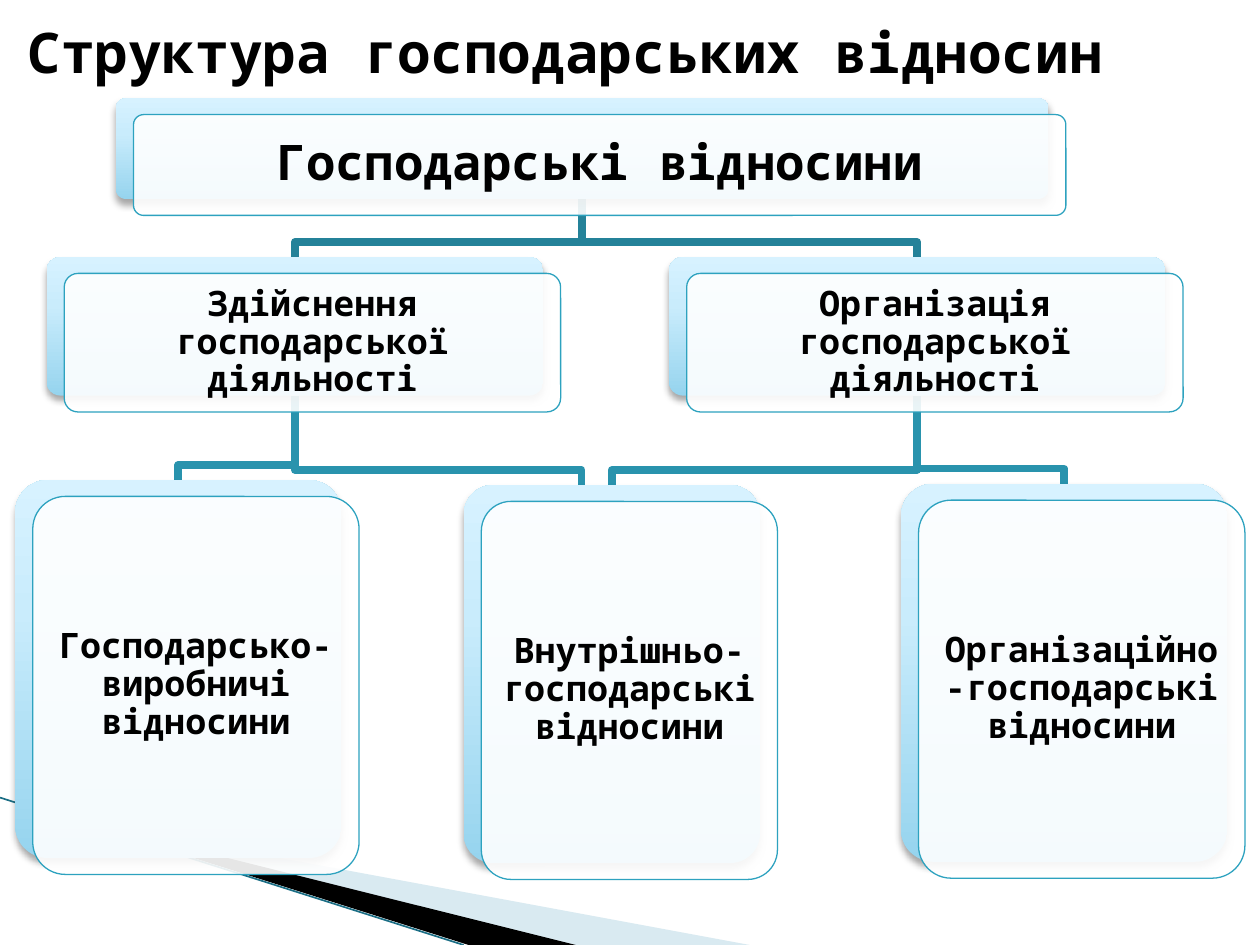
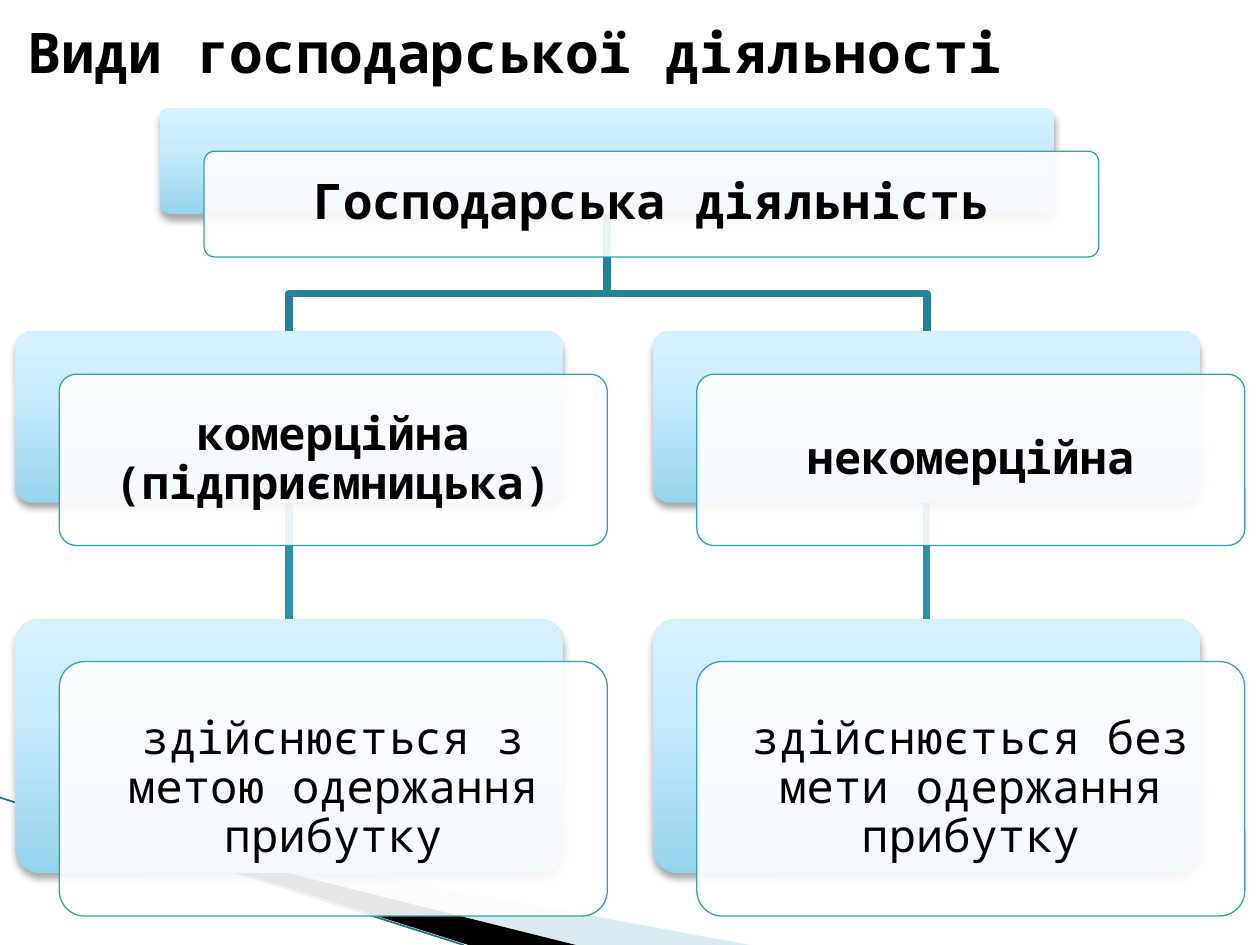
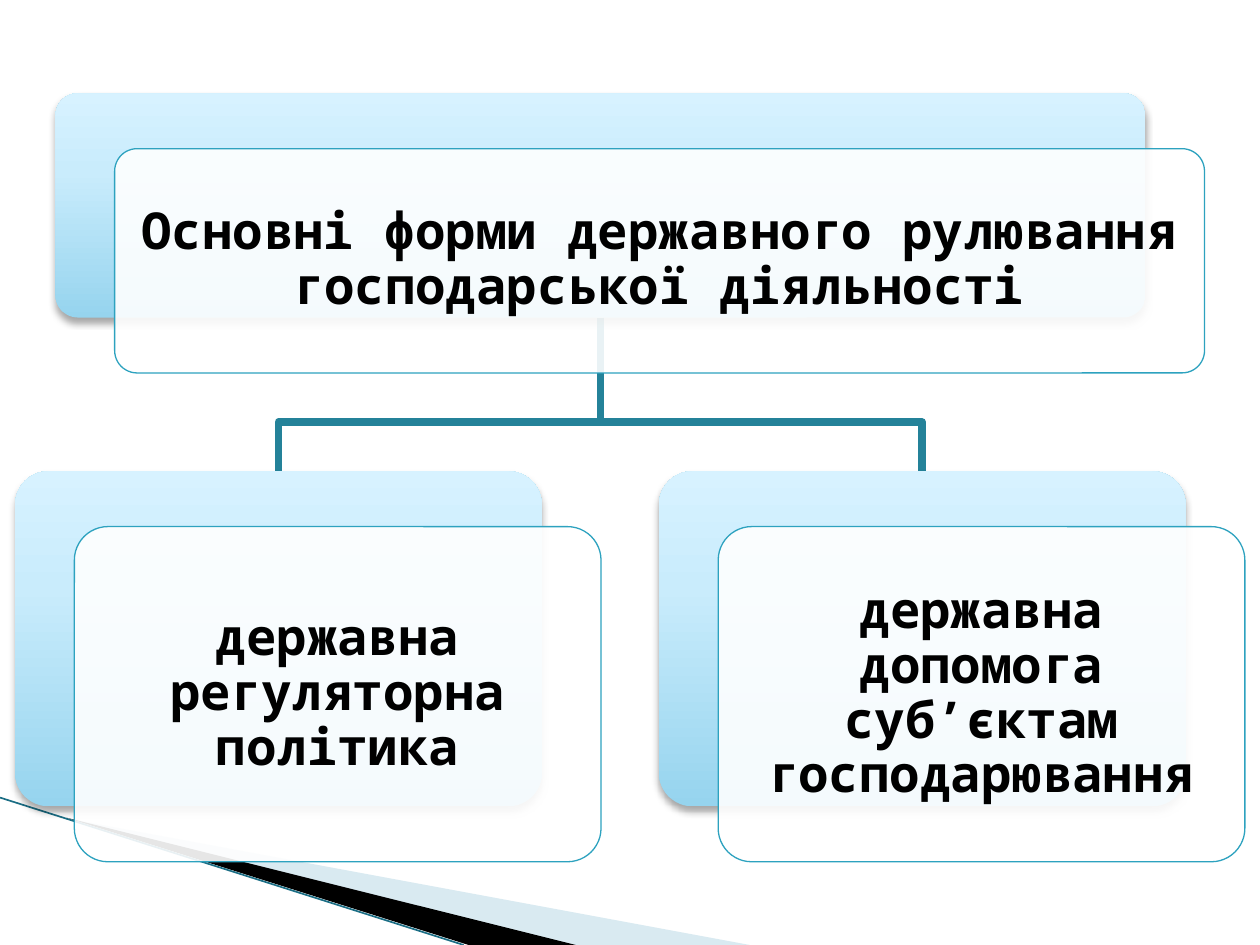
import pptx
import pptx.dml.color
import pptx.enum.shapes
import pptx.enum.text
import pptx.oxml
import pptx.oxml.ns
import pptx.util
from collections import namedtuple
from lxml import etree

Inches = pptx.util.Inches
qn = pptx.oxml.ns.qn

FONT = "Noto Sans Mono"
BLACK = "000000"
WHITE = "FFFFFF"
CARD_BORDER = "2DA2BF"
ROOT_LINK = "248299"
LOWER_LINK = "2993AD"
BAND_BLUE = "A0CBDC"
BAND_EDGE = "1B6E85"
GRADIENT = [(0, "96D4EE"), (65, "C9ECFC"), (100, "D7F2FF")]
LINK_WIDTH = 4.33

Card = namedtuple("Card", "text left top width height size bold", defaults=[True])
Link = namedtuple("Link", "parent child shift", defaults=[0])
Tree = namedtuple("Tree", "title offset bend cards links")

TREES = [
    Tree(
        "Структура господарських відносин", (0.14, 0.13), 0.12,
        [
            Card("Господарські відносини", 0.92, 0.78, 7.4, 0.8, 28),
            Card("Здійснення господарської діяльності", 0.37, 2.04, 3.94, 1.1, 20),
            Card("Організація господарської діяльності", 5.31, 2.04, 3.94, 1.1, 20),
            Card("Господарсько-виробничі відносини", 0.12, 3.81, 2.59, 3, 20),
            Card("Внутрішньо-господарські відносини", 3.68, 3.85, 2.35, 3, 20),
            Card("Організаційно-господарські відносини", 7.15, 3.84, 2.59, 3, 20),
        ],
        [Link(2, 5), Link(2, 4), Link(0, 2), Link(1, 4, -0.24), Link(1, 3), Link(0, 1)],
    ),
    Tree(
        "Види господарської діяльності", (0.35, 0.34), 0.3,
        [
            Card("Господарська діяльність", 1.27, 0.86, 7.1, 0.84, 28),
            Card("комерційна (підприємницька)", 0.12, 2.63, 4.35, 1.36, 26),
            Card("здійснюється з метою одержання прибутку", 0.12, 4.91, 4.35, 2.02, 26, False),
            Card("некомерційна", 5.18, 2.63, 4.35, 1.36, 26),
            Card("здійснюється без мети одержання прибутку", 5.18, 4.91, 4.35, 2.02, 26, False),
        ],
        [Link(3, 4), Link(0, 3), Link(1, 2), Link(0, 1)],
    ),
    Tree(
        None, (0.47, 0.44), 0.39,
        [
            Card("Основні форми державного рулювання господарської діяльності",
                 0.44, 0.74, 8.65, 1.78, 29),
            Card("державна регуляторна політика", 0.12, 3.74, 4.18, 2.66, 29),
            Card("державна допомога суб’єктам господарювання", 5.23, 3.74, 4.18, 2.66, 29),
        ],
        [Link(0, 2), Link(0, 1)],
    ),
]


def rgb(value):
    """Turn a hex string into a colour."""
    return pptx.dml.color.RGBColor.from_string(value)


def fill_solid(shape, colour, opacity=100):
    """Fill a shape with a colour of the given opacity in percent."""
    shape.fill.solid()
    shape.fill.fore_color.rgb = rgb(colour)
    if opacity < 100:
        colour_element = shape._element.spPr.find(qn("a:solidFill"))[0]
        etree.SubElement(colour_element, qn("a:alpha"), val=str(opacity * 1000))


def fill_gradient(shape):
    """Fill a shape with the shared gradient, darkest at the bottom."""
    shape.fill.gradient()
    shape.fill.gradient_angle = 90
    stops = shape._element.spPr.find(qn("a:gradFill")).find(qn("a:gsLst"))
    stops.clear()
    for position, colour in GRADIENT:
        stop = etree.SubElement(stops, qn("a:gs"), pos=str(position * 1000))
        etree.SubElement(stop, qn("a:srgbClr"), val=colour)


def add_shadow(shape):
    """Give a shape a soft shadow straight below it."""
    shape.shadow.inherit = False
    effects = shape._element.spPr.find(qn("a:effectLst"))
    shadow = etree.SubElement(
        effects, qn("a:outerShdw"), blurRad=str(pptx.util.Pt(4)),
        dist=str(pptx.util.Pt(3)), dir="5400000", algn="ctr", rotWithShape="0")
    colour = etree.SubElement(shadow, qn("a:srgbClr"), val=BLACK)
    etree.SubElement(colour, qn("a:alpha"), val="35000")


def set_line(shape, colour, width):
    """Set the colour and width of a line or outline."""
    shape.line.color.rgb = rgb(colour)
    shape.line.width = pptx.util.Pt(width)


def add_path(slide, points, closed):
    """Draw an outline through points given in inches."""
    corners = [(Inches(x), Inches(y)) for x, y in points]
    builder = slide.shapes.build_freeform(*corners[0])
    builder.add_line_segments(corners[1:], close=closed)
    shape = builder.convert_to_shape()
    shape.shadow.inherit = False
    return shape


def add_straight_line(slide, start, end, colour, width):
    """Draw a straight line between two points in inches."""
    line = slide.shapes.add_connector(
        pptx.enum.shapes.MSO_CONNECTOR.STRAIGHT, *[Inches(value) for value in start + end])
    set_line(line, colour, width)
    etree.SubElement(line._element.spPr, qn("a:effectLst"))


def add_corner_bands(slide):
    """Draw the wedges and the thin line in the lower left corner."""
    wedges = [
        ([(0.55, 6.5), (5.95, 7.5), (4.56, 7.5)], BAND_BLUE, 40),
        ([(0.53, 6.49), (4.57, 7.5), (3.72, 7.5)], BLACK, 100),
    ]
    for points, colour, opacity in wedges:
        wedge = add_path(slide, points, True)
        fill_solid(wedge, colour, opacity)
        wedge.line.fill.background()
    add_straight_line(slide, (0, 6.33), (3.68, 7.5), BAND_EDGE, 0.95)


def write_text(text_frame, text, size, bold):
    """Write one paragraph, centred vertically, and return it."""
    text_frame.word_wrap = True
    text_frame.vertical_anchor = pptx.enum.text.MSO_ANCHOR.MIDDLE
    text_frame.text = text
    paragraph = text_frame.paragraphs[0]
    font = paragraph.runs[0].font
    font.name = FONT
    font.size = pptx.util.Pt(size)
    font.bold = bold
    font.color.rgb = rgb(BLACK)
    return paragraph


def add_title(slide, text):
    """Add the slide title."""
    box = slide.shapes.add_textbox(Inches(0.12), Inches(0.13), Inches(9.76), Inches(0.55))
    write_text(box.text_frame, text, 32, True)


def add_link(slide, parent, child, shift, bend, colour):
    """Join the bottom of a parent card to the top of a child card."""
    start = (parent.left + parent.width / 2, parent.top + parent.height)
    end = (child.left + child.width / 2 + shift, child.top)
    if abs(start[0] - end[0]) < 0.01:
        add_straight_line(slide, start, end, colour, LINK_WIDTH)
        return
    turn = end[1] - bend
    elbow = add_path(slide, [start, (start[0], turn), (end[0], turn), end], False)
    elbow.fill.background()
    set_line(elbow, colour, LINK_WIDTH)


def add_rounded(slide, left, top, width, height):
    """Add a rounded rectangle with the shared corner radius."""
    shape = slide.shapes.add_shape(
        pptx.enum.shapes.MSO_SHAPE.ROUNDED_RECTANGLE,
        Inches(left), Inches(top), Inches(width), Inches(height))
    shape.adjustments[0] = 0.1
    return shape


def add_card(slide, card, offset):
    """Add a gradient plate with a shifted translucent text card over it."""
    plate = add_rounded(slide, card.left, card.top, card.width, card.height)
    fill_gradient(plate)
    plate.line.fill.background()
    add_shadow(plate)

    front = add_rounded(
        slide, card.left + offset[0], card.top + offset[1], card.width, card.height)
    fill_solid(front, WHITE, 90)
    set_line(front, CARD_BORDER, 0.75)
    front.shadow.inherit = False
    frame = front.text_frame
    inset = pptx.util.Pt(0.3 * card.size)
    frame.margin_left = frame.margin_right = inset
    frame.margin_top = frame.margin_bottom = inset
    paragraph = write_text(frame, card.text, card.size, card.bold)
    paragraph.alignment = pptx.enum.text.PP_ALIGN.CENTER
    paragraph.line_spacing = 0.9


def add_tree_slide(presentation, tree):
    """Add a slide that shows one hierarchy."""
    slide = presentation.slides.add_slide(presentation.slide_layouts[6])
    add_corner_bands(slide)
    for link in tree.links:
        colour = LOWER_LINK if link.parent else ROOT_LINK
        add_link(slide, tree.cards[link.parent], tree.cards[link.child],
                 link.shift, tree.bend, colour)
    for card in tree.cards:
        add_card(slide, card, tree.offset)
    if tree.title:
        add_title(slide, tree.title)


def main():
    """Build the presentation."""
    presentation = pptx.Presentation()
    presentation.slide_width = Inches(10)
    presentation.slide_height = Inches(7.5)
    for tree in TREES:
        add_tree_slide(presentation, tree)
    presentation.save("out.pptx")


if __name__ == "__main__":
    main()
